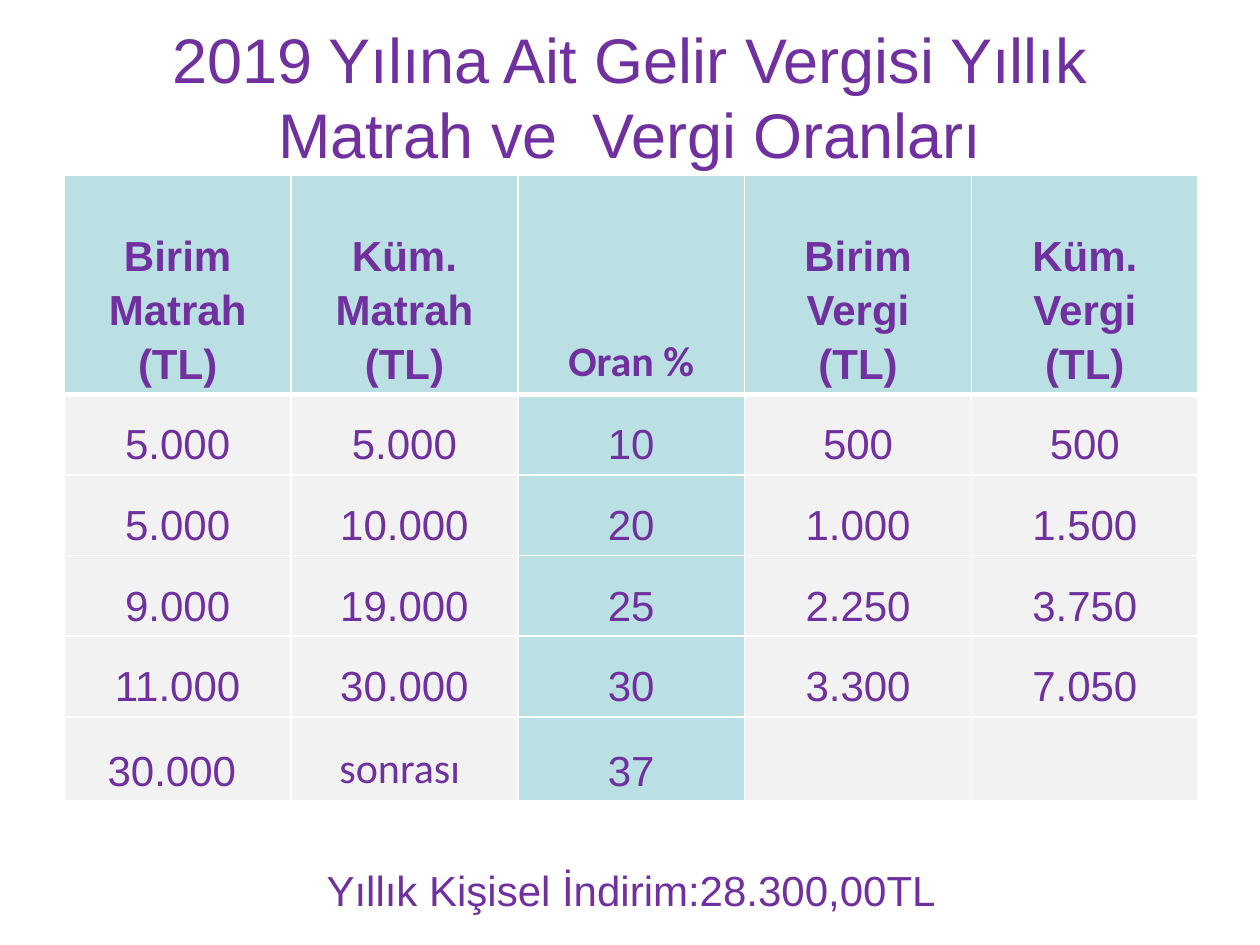
"""Build a slide with the 2019 income tax brackets and rates."""
from lxml import etree
from pptx import Presentation
from pptx.dml.color import RGBColor
from pptx.enum.text import MSO_ANCHOR, PP_ALIGN
from pptx.oxml.ns import qn
from pptx.util import Inches, Pt

CENTER = PP_ALIGN.CENTER
MIDDLE, BOTTOM = MSO_ANCHOR.MIDDLE, MSO_ANCHOR.BOTTOM

COLORS = {"text": "7030A0", "accent": "BBE0E3", "body": "F2F2F2", "border": "FFFFFF"}
CAPTIONS = [
    ("2019 Yılına Ait Gelir Vergisi Yıllık Matrah ve  Vergi Oranları", 0.5, 0.13, 36),
    ("Yıllık Kişisel İndirim:28.300,00TL", 0.51, 6.43, 24),
]
CAPTION_SIZE = (9, 1.26)
ROWS = [
    ["Birim Matrah\n(TL)", "Küm. Matrah (TL)", "Oran %", "Birim Vergi (TL)", "Küm.\nVergi (TL)"],
    ["5.000", "5.000", "10", "500", "500"],
    ["5.000", "10.000", "20", "1.000", "1.500"],
    ["9.000", "19.000", "25", "2.250", "3.750"],
    ["11.000", "30.000", "30", "3.300", "7.050"],
    ["30.000 ", "sonrası ", "37", "", ""],
]
CALIBRI_CELLS = {"Oran %", "sonrası "}
RATE_COLUMN = 2
TABLE_LEFT, TABLE_TOP, COLUMN_WIDTH = 0.51, 1.39, 1.8
ROW_HEIGHTS = [1.74, 0.64, 0.64, 0.64, 0.64, 0.67]
CELL_FORMAT = {
    "margin_left": Inches(0.21), "margin_right": Inches(0.21),
    "margin_top": Inches(0.05), "margin_bottom": Inches(0.05),
    "vertical_anchor": BOTTOM,
}


def write(tf, text, size, font="Arial", bold=False, spacing=None):
    for i, line in enumerate(text.split("\n")):
        p = tf.paragraphs[0] if i == 0 else tf.add_paragraph()
        p.alignment, p.line_spacing = CENTER, spacing
        r = p.add_run()
        r.text = line
        for name, value in {"name": font, "size": Pt(size), "bold": bold}.items():
            setattr(r.font, name, value)
        r.font.color.rgb = RGBColor.from_string(COLORS["text"])


def add_borders(cell, widths):
    tc_pr = cell._tc.get_or_add_tcPr()
    for side, width in widths.items():
        line = etree.SubElement(tc_pr, qn(f"a:ln{side}"), w=str(Pt(width)))
        fill = etree.SubElement(line, qn("a:solidFill"))
        etree.SubElement(fill, qn("a:srgbClr"), val=COLORS["border"])


def add_caption(s, text, left, top, size):
    box = s.shapes.add_textbox(*map(Inches, (left, top, *CAPTION_SIZE)))
    tf = box.text_frame
    tf.word_wrap, tf.vertical_anchor = True, MIDDLE
    write(tf, text, size)


def add_rates_table(s):
    columns = len(ROWS[0])
    bounds = (TABLE_LEFT, TABLE_TOP, COLUMN_WIDTH * columns, sum(ROW_HEIGHTS))
    table = s.shapes.add_table(len(ROWS), columns, *map(Inches, bounds)).table
    for column in table.columns:
        column.width = Inches(COLUMN_WIDTH)
    for i, (texts, height) in enumerate(zip(ROWS, ROW_HEIGHTS)):
        table.rows[i].height = Inches(height)
        header = i == 0
        for j, text in enumerate(texts):
            cell = table.cell(i, j)
            for name, value in CELL_FORMAT.items():
                setattr(cell, name, value)
            add_borders(cell, {"L": 1, "R": 1, "T": 3 if i == 1 else 1, "B": 3 if header else 1})
            cell.fill.solid()
            fill = "accent" if header or j == RATE_COLUMN else "body"
            cell.fill.fore_color.rgb = RGBColor.from_string(COLORS[fill])
            if text:
                font = "Calibri" if text in CALIBRI_CELLS else "Arial"
                write(cell.text_frame, text, 24, font, header, 1.15)


def main():
    prs = Presentation()
    prs.slide_width, prs.slide_height = Inches(10), Inches(7.5)
    s = prs.slides.add_slide(prs.slide_layouts[6])
    title, allowance = CAPTIONS
    add_caption(s, *title)
    add_rates_table(s)
    add_caption(s, *allowance)
    prs.save("out.pptx")


if __name__ == "__main__":
    main()
